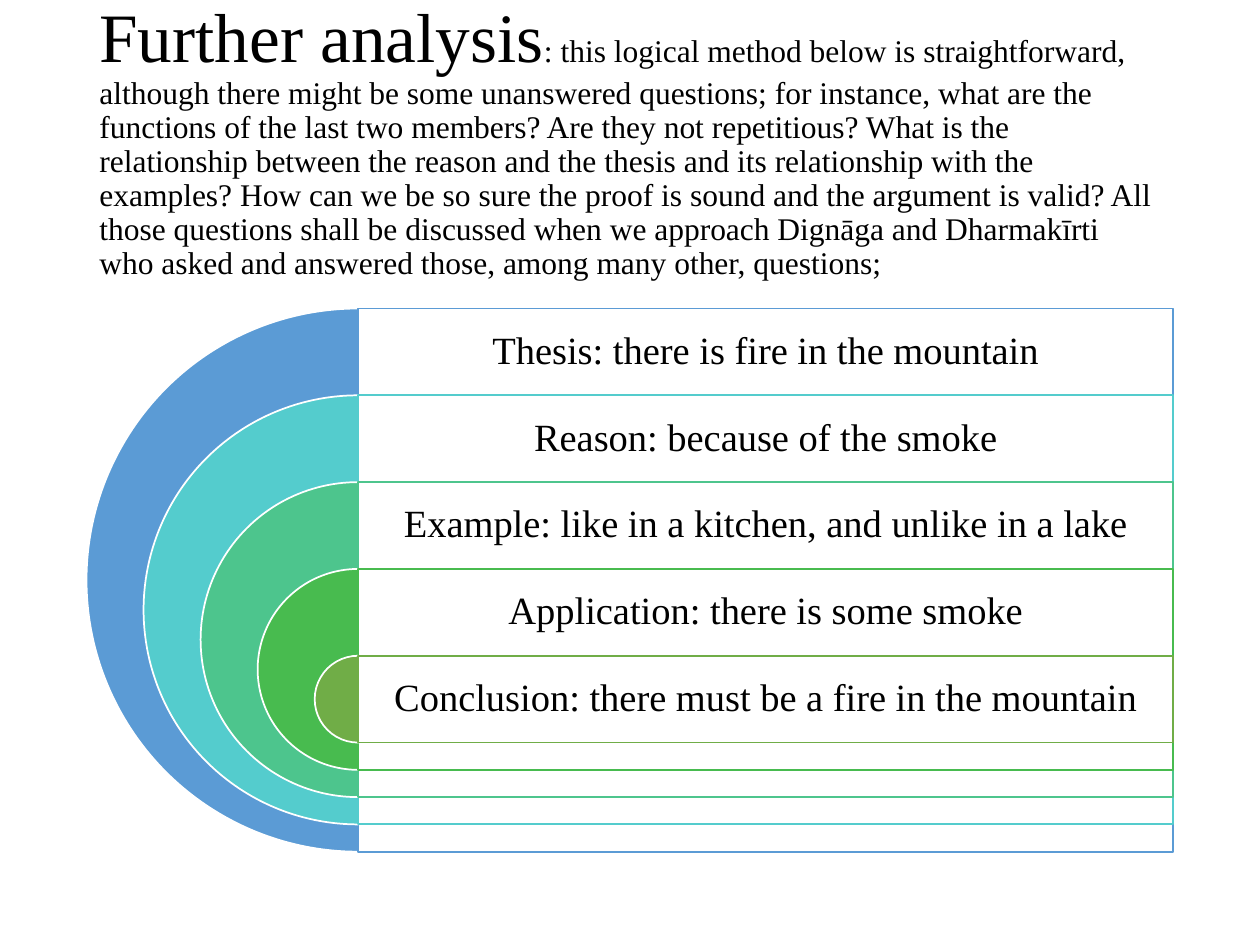
from pptx import Presentation
from pptx.dml.color import RGBColor
from pptx.enum.shapes import MSO_SHAPE as Kind
from pptx.enum.text import MSO_ANCHOR as Anchor, MSO_AUTO_SIZE as Fit, PP_ALIGN as Align
from pptx.oxml.ns import qn
from pptx.util import Cm, Pt
from lxml import etree

BLACK = RGBColor(0, 0, 0)
WHITE = RGBColor(255, 255, 255)
BLUE = RGBColor(0x5B, 0x9B, 0xD5)
TEAL = RGBColor(0x54, 0xCC, 0xCD)
MINT = RGBColor(0x4D, 0xC5, 0x8D)
GREEN = RGBColor(0x48, 0xBB, 0x4F)
OLIVE = RGBColor(0x70, 0xAD, 0x47)
FONT = "Times New Roman"

HEAD = "Further analysis"
BODY = (
    ": this logical method below is straightforward, although there might be some "
    "unanswered questions; for instance, what are the functions of the last two members? "
    "Are they not repetitious? What is the relationship between the reason and the thesis "
    "and its relationship with the examples? How can we be so sure the proof is sound and "
    "the argument is valid? All those questions shall be discussed when we approach "
    "Dignāga and Dharmakīrti who asked and answered those, among many other, questions;"
)
STEPS = [
    ("Thesis: there is fire in the mountain", BLUE),
    ("Reason: because of the smoke", TEAL),
    ("Example: like in a kitchen, and unlike in a lake", MINT),
    ("Application: there is some smoke", GREEN),
    ("Conclusion: there must be a fire in the mountain", OLIVE),
]

AXIS, TOP, WIDTH = 7.22, 6.22, 16.43
BAND, OUTER, SHRINK = 1.75, 10.95, 2.3


def style(para, align):
    para.alignment = align
    para.line_spacing = 0.9
    para.font.name = FONT
    para.font.color.rgb = BLACK


def add_title(slide):
    title = slide.shapes.title
    title.left, title.top = Cm(1.75), Cm(1.02)
    title.width, title.height = Cm(21.9), Cm(3.68)
    frame = title.text_frame
    frame.word_wrap = True
    frame.auto_size = Fit.NONE
    frame.vertical_anchor = Anchor.MIDDLE
    para = frame.paragraphs[0]
    style(para, Align.LEFT)
    for text, size in ((HEAD, 39.6), (BODY, 18)):
        run = para.add_run()
        run.text = text
        run.font.size = Pt(size)


def add_shape(group, kind, box, fill, line):
    shape = group.shapes.add_shape(kind, *map(Cm, box))
    shape.shadow.inherit = False
    shape.fill.solid()
    shape.fill.fore_color.rgb = fill
    shape.line.color.rgb = line
    shape.line.width = Pt(1)
    return shape


def add_pie(group, top, size, color):
    box = (AXIS - size / 2, top, size, size)
    pie = add_shape(group, Kind.PIE, box, color, WHITE)
    pie.adjustments[0], pie.adjustments[1] = 54, 162


def add_panel(group, top, size, color):
    box = (AXIS, top, WIDTH, size)
    panel = add_shape(group, Kind.RECTANGLE, box, WHITE, color)
    tint = panel.fill._xPr.find(qn("a:solidFill"))[0]
    etree.SubElement(tint, qn("a:alpha")).set("val", "90000")


def add_label(group, top, text):
    label = group.shapes.add_textbox(Cm(AXIS), Cm(top), Cm(WIDTH), Cm(BAND))
    frame = label.text_frame
    frame.word_wrap = True
    frame.vertical_anchor = Anchor.MIDDLE
    frame.margin_left = frame.margin_right = Cm(0.23)
    frame.margin_top = frame.margin_bottom = Cm(0.23)
    para = frame.paragraphs[0]
    para.text = text
    style(para, Align.CENTER)
    para.font.size = Pt(22)


def main():
    deck = Presentation()
    deck.slide_width, deck.slide_height = Cm(25.4), Cm(19.05)
    slide = deck.slides.add_slide(deck.slide_layouts[5])
    add_title(slide)
    group = slide.shapes.add_group_shape()
    for i, (text, color) in enumerate(STEPS):
        top, size = TOP + i * BAND, OUTER - i * SHRINK
        add_pie(group, top, size, color)
        add_panel(group, top, size, color)
        add_label(group, top, text)
    deck.save("out.pptx")


if __name__ == "__main__":
    main()
